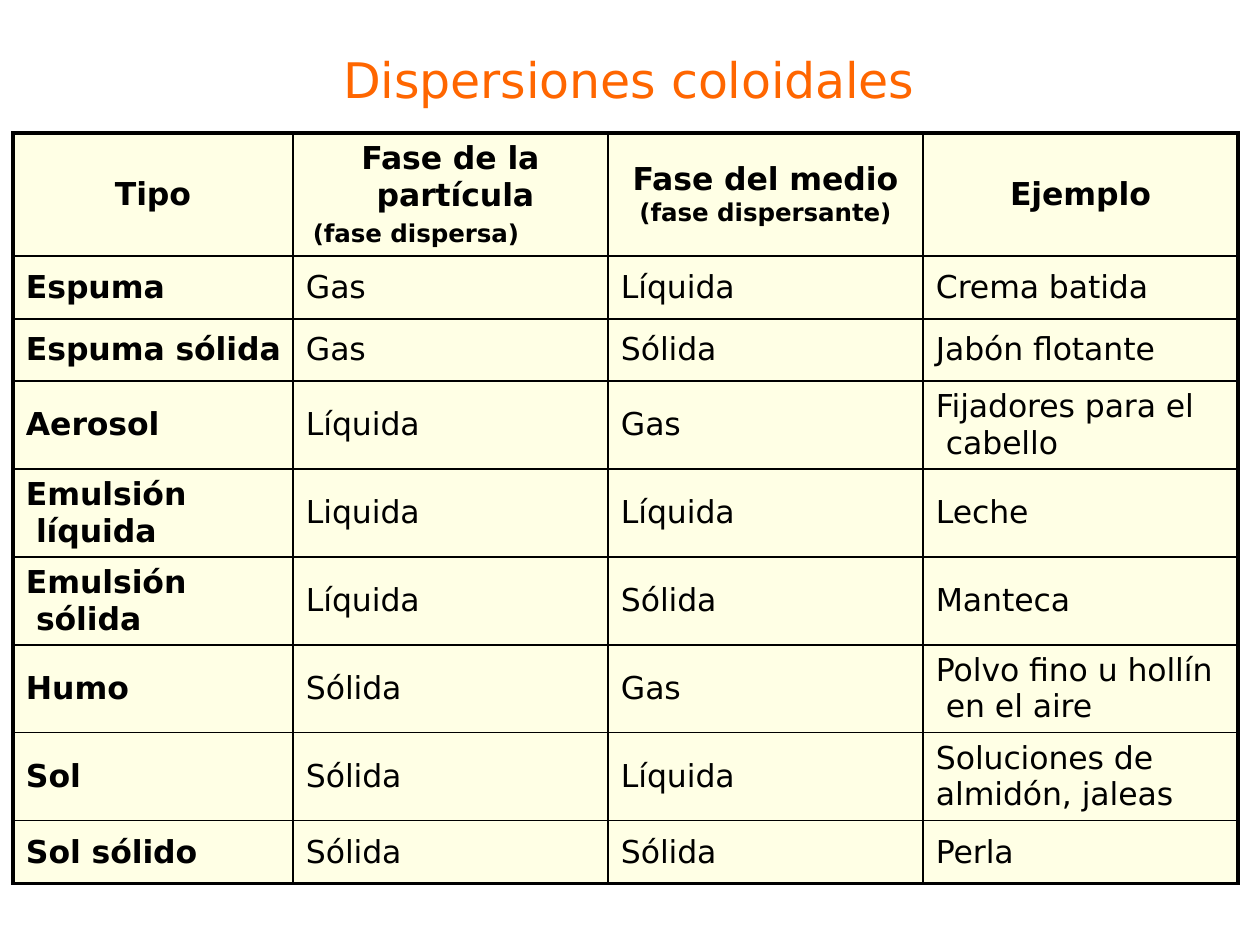
from dataclasses import dataclass

import lxml.etree
import pptx
import pptx.dml.color
import pptx.enum.text
import pptx.oxml.ns
import pptx.util

EMU_PER_PX = 914400 / 126
FONT_NAME = "DejaVu Sans"
ORANGE = pptx.dml.color.RGBColor(0xFF, 0x66, 0x00)
CREAM = pptx.dml.color.RGBColor(0xFF, 0xFF, 0xE5)
BLACK = pptx.dml.color.RGBColor(0x00, 0x00, 0x00)
CENTER = pptx.enum.text.PP_ALIGN.CENTER
LEFT = pptx.enum.text.PP_ALIGN.LEFT
OUTER_BORDER, INNER_BORDER = 2.25, 1
LETTER_SPACING = "-5"
CELL_INDENT, HANGING = 13, 10
HEADING_MARGIN, SUBHEADING_MARGIN = 55, 69
COLUMN_WIDTHS = [280, 315, 315, 315]
ROW_HEIGHTS = [123, 63, 62, 88, 88, 88, 88, 88, 63]


@dataclass
class Line:
    text: str
    size: int = 18
    bold: bool = True
    alignment: pptx.enum.text.PP_ALIGN = CENTER
    left: int = 0
    right: int = 0
    hanging: int = 0
    space_before: float = 0


@dataclass
class Dispersion:
    kind: str
    particle: str
    medium: str
    example: str
    hanging: int = HANGING


HEADINGS = [
    [Line("Tipo")],
    [
        Line("Fase de la partícula", left=HEADING_MARGIN, right=HEADING_MARGIN, hanging=HANGING),
        Line("(fase dispersa)", size=14, right=SUBHEADING_MARGIN, space_before=3.4),
    ],
    [Line("Fase del medio"), Line("(fase dispersante)", size=14)],
    [Line("Ejemplo")],
]
DISPERSIONS = [
    Dispersion("Espuma", "Gas", "Líquida", "Crema batida"),
    Dispersion("Espuma sólida", "Gas", "Sólida", "Jabón flotante"),
    Dispersion("Aerosol", "Líquida", "Gas", "Fijadores para el cabello"),
    Dispersion("Emulsión líquida", "Liquida", "Líquida", "Leche"),
    Dispersion("Emulsión sólida", "Líquida", "Sólida", "Manteca"),
    Dispersion("Humo", "Sólida", "Gas", "Polvo fino u hollín en el aire"),
    Dispersion("Sol", "Sólida", "Líquida", "Soluciones de almidón, jaleas", hanging=0),
    Dispersion("Sol sólido", "Sólida", "Sólida", "Perla"),
]


def px(length: int) -> pptx.util.Emu:
    return pptx.util.Emu(round(length * EMU_PER_PX))


def clear_margins(frame) -> None:
    frame.margin_left = frame.margin_right = 0
    frame.margin_top = frame.margin_bottom = 0


def style_font(font, size: int, color: pptx.dml.color.RGBColor, bold: bool) -> None:
    font.name = FONT_NAME
    font.size = pptx.util.Pt(size)
    font.bold = bold
    font.color.rgb = color
    font._rPr.set("spc", LETTER_SPACING)


def write_line(paragraph, line: Line) -> None:
    paragraph.text = line.text
    paragraph.alignment = line.alignment
    paragraph.space_before = pptx.util.Pt(line.space_before)
    style_font(paragraph.font, line.size, BLACK, line.bold)
    properties = paragraph._p.get_or_add_pPr()
    properties.set("marL", str(px(line.left + line.hanging)))
    properties.set("marR", str(px(line.right)))
    properties.set("indent", str(px(-line.hanging)))


def add_border(cell, side: str, width: float) -> None:
    name = pptx.oxml.ns.qn
    border = lxml.etree.SubElement(cell._tc.get_or_add_tcPr(), name("a:ln" + side))
    border.set("w", str(pptx.util.Pt(width)))
    fill = lxml.etree.SubElement(border, name("a:solidFill"))
    lxml.etree.SubElement(fill, name("a:srgbClr")).set("val", str(BLACK))


def draw_cell(cell, lines: list[Line], outer_sides: str) -> None:
    for side in "LRTB":
        add_border(cell, side, OUTER_BORDER if side in outer_sides else INNER_BORDER)
    cell.fill.solid()
    cell.fill.fore_color.rgb = CREAM
    cell.vertical_anchor = pptx.enum.text.MSO_ANCHOR.MIDDLE
    clear_margins(cell)
    for index, line in enumerate(lines):
        frame = cell.text_frame
        write_line(frame.add_paragraph() if index else frame.paragraphs[0], line)


def dispersion_cells(dispersion: Dispersion) -> list[list[Line]]:
    texts = [dispersion.kind, dispersion.particle, dispersion.medium, dispersion.example]
    return [
        [Line(text, bold=column == 0, alignment=LEFT,
              left=CELL_INDENT, hanging=dispersion.hanging)]
        for column, text in enumerate(texts)
    ]


def draw_table(slide) -> None:
    rows = [HEADINGS] + [dispersion_cells(dispersion) for dispersion in DISPERSIONS]
    table = slide.shapes.add_table(
        len(rows), len(COLUMN_WIDTHS),
        px(13), px(133), px(sum(COLUMN_WIDTHS)), px(sum(ROW_HEIGHTS)),
    ).table
    table.first_row = True
    table.horz_banding = False
    for column, width in zip(table.columns, COLUMN_WIDTHS):
        column.width = px(width)
    for row, height in zip(table.rows, ROW_HEIGHTS):
        row.height = px(height)
    last_row, last_column = len(rows) - 1, len(COLUMN_WIDTHS) - 1
    for row_index, cells in enumerate(rows):
        for column_index, lines in enumerate(cells):
            outer_sides = {0: "T", last_row: "B"}.get(row_index, "")
            outer_sides += {0: "L", last_column: "R"}.get(column_index, "")
            draw_cell(table.cell(row_index, column_index), lines, outer_sides)


def draw_title(slide) -> None:
    frame = slide.shapes.add_textbox(px(329), px(48), px(600), px(62)).text_frame
    frame.word_wrap = True
    clear_margins(frame)
    frame.margin_top = px(2)
    paragraph = frame.paragraphs[0]
    paragraph.text = "Dispersiones coloidales"
    paragraph.alignment = CENTER
    style_font(paragraph.font, 28, ORANGE, False)


def main() -> None:
    presentation = pptx.Presentation()
    presentation.slide_width = px(1260)
    presentation.slide_height = px(945)
    slide = presentation.slides.add_slide(presentation.slide_layouts[6])
    draw_table(slide)
    draw_title(slide)
    presentation.save("out.pptx")


if __name__ == "__main__":
    main()
